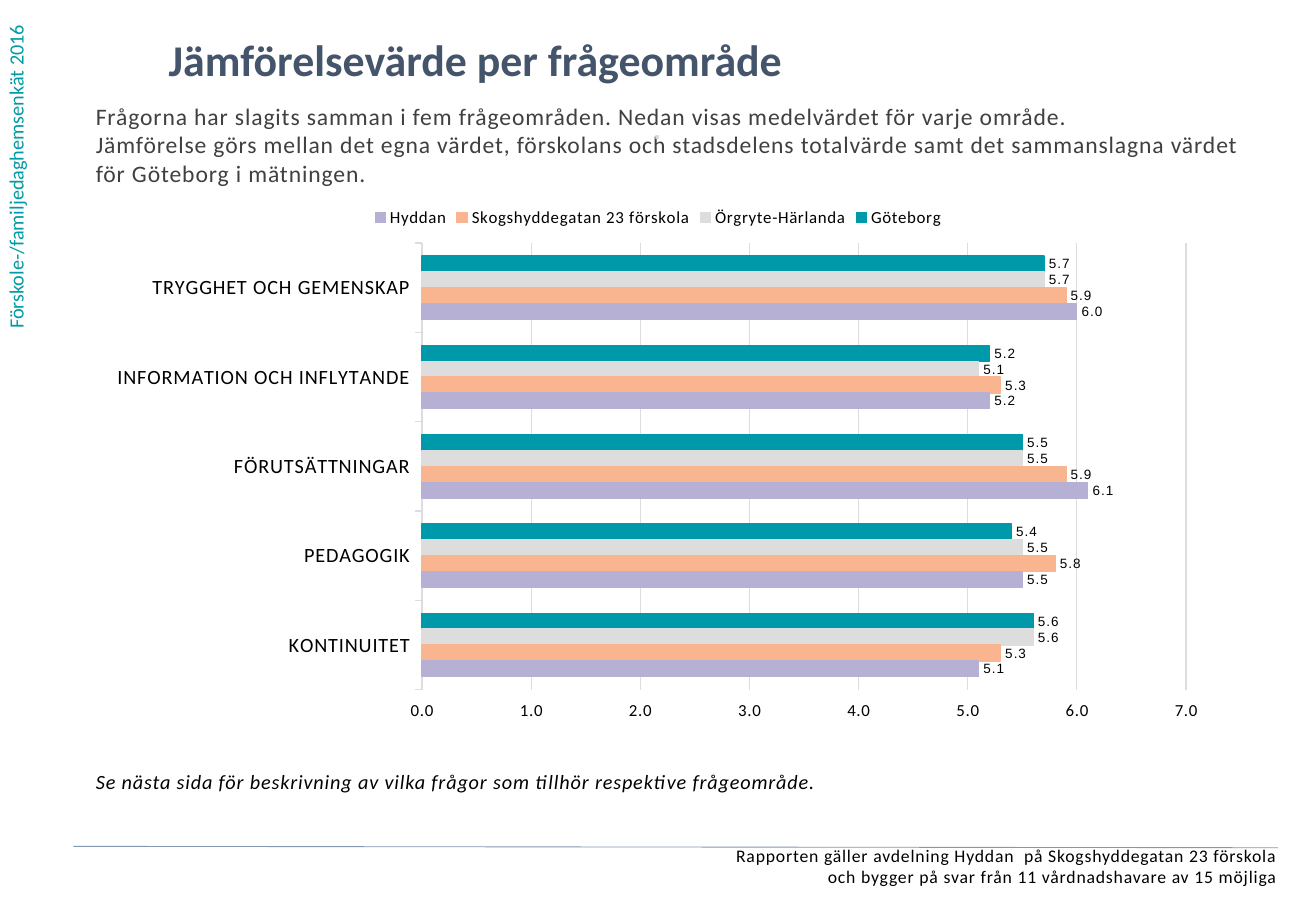
from pptx import Presentation
from pptx.chart.data import CategoryChartData as ChartData
from pptx.dml.color import RGBColor as RGB
from pptx.enum.chart import XL_CHART_TYPE as Kind
from pptx.enum.chart import XL_LABEL_POSITION as Spot
from pptx.enum.chart import XL_LEGEND_POSITION as Side
from pptx.enum.chart import XL_TICK_LABEL_POSITION as Place
from pptx.enum.chart import XL_TICK_MARK as Tick
from pptx.enum.shapes import MSO_CONNECTOR as Link
from pptx.enum.text import PP_ALIGN as Align
from pptx.oxml.ns import qn
from pptx.util import Pt

INK = {
    "teal": "009BA4", "navy": "44546A", "gray": "404040", "black": "000000",
    "pale": "D2D9E2", "grid": "DDDDDD", "rule": "8497B0",
}
SCORES = [
    ("Göteborg", "0099AA", (5.7, 5.2, 5.5, 5.4, 5.6)),
    ("Örgryte-Härlanda", "DDDDDD", (5.7, 5.1, 5.5, 5.5, 5.6)),
    ("Skogshyddegatan 23 förskola", "F9B590", (5.9, 5.3, 5.9, 5.8, 5.3)),
    ("Hyddan", "B6B1D4", (6.0, 5.2, 6.1, 5.5, 5.1)),
]
FORMAT = "0.0;0.0"


def style(font, size, ink="black", face="Calibri", gap=50):
    """Set a font; gap is the letter spacing in hundredths of a point."""
    font.name, font.size = face, Pt(size)
    font.color.rgb = RGB.from_string(INK[ink])
    font._element.set("spc", str(gap))


def add_text(box, text, size, ink, gap=50, align=Align.LEFT):
    """Add a text box without margins, one paragraph per line."""
    shape = slide.shapes.add_textbox(*map(Pt, box))
    frame = shape.text_frame
    frame.word_wrap = True
    frame.margin_left = frame.margin_right = 0
    frame.margin_top = frame.margin_bottom = 0
    frame.text = text
    for line in frame.paragraphs:
        line.alignment = align
        for run in line.runs:
            style(run.font, size, ink, gap=gap)
    return frame


deck = Presentation()
deck.slide_width, deck.slide_height = Pt(780), Pt(540)
slide = deck.slides.add_slide(deck.slide_layouts[6])

# Texts
survey = add_text((2, 0, 26, 195), "Förskole-/familjedaghemsenkät 2016", 12, "teal", 0)
survey._txBody.bodyPr.set("vert", "vert270")
title = add_text((100, 19.5, 600, 41), "Jämförelsevärde per frågeområde", 26, "navy", 0)
title.paragraphs[0].runs[0].font.bold = True
add_text(
    (56.8, 60.3, 690, 54),
    "Frågorna har slagits samman i fem frågeområden. Nedan visas medelvärdet för varje område.\n"
    "Jämförelse görs mellan det egna värdet, förskolans och stadsdelens totalvärde "
    "samt det sammanslagna värdet för Göteborg i mätningen.",
    14, "gray")
add_text(
    (8, 500.8, 749, 31),
    "Rapporten gäller avdelning Hyddan  på Skogshyddegatan 23 förskola\n"
    "och bygger på svar från 11 vårdnadshavare av 15 möjliga",
    10.5, "black", align=Align.RIGHT)
dot = add_text((278.5, 73.5, 222, 28), "⋅", 12, "pale", align=Align.CENTER)
dot.paragraphs[0].runs[0].font.bold = True
note = add_text(
    (56.8, 456, 666, 20),
    "Se nästa sida för beskrivning av vilka frågor som tillhör respektive frågeområde.",
    12, "black")
note.paragraphs[0].runs[0].font.italic = True

# Chart
data = ChartData(number_format=FORMAT)
data.categories = ["TRYGGHET OCH GEMENSKAP", "INFORMATION OCH INFLYTANDE",
                   "FÖRUTSÄTTNINGAR", "PEDAGOGIK", "KONTINUITET"]
for name, _, marks in SCORES:
    data.add_series(name, marks)
chart = slide.shapes.add_chart(
    Kind.BAR_CLUSTERED, Pt(57), Pt(115.4), Pt(666), Pt(319), data).chart
chart.has_title = False
style(chart.font, 10)
chart.has_legend = True
chart.legend.position = Side.TOP
chart.legend.include_in_layout = False
style(chart.legend.font, 10)

plot = chart.plots[0]
plot.gap_width, plot.overlap = 162, 0
plot.vary_by_categories = False
for series, (_, tint, _) in zip(plot.series, SCORES):
    color = RGB.from_string(tint)
    series.format.fill.solid()
    series.format.fill.fore_color.rgb = color
    series.format.line.color.rgb = color
    series.format.line.width = Pt(0.75)
    labels = series.data_labels
    labels.show_value = True
    labels.number_format = FORMAT
    labels.number_format_is_linked = False
    labels.position = Spot.OUTSIDE_END
    style(labels.font, 8, face="Arial")

areas, scale = chart.category_axis, chart.value_axis
areas.reverse_order = True
scale.tick_label_position = Place.HIGH
scale.minimum_scale, scale.maximum_scale, scale.major_unit = 0, 7, 1
scale.has_major_gridlines = True
for line in (areas.format.line, scale.major_gridlines.format.line):
    line.color.rgb = RGB.from_string(INK["grid"])
    line.width = Pt(0.75)
scale.format.line.fill.background()
for axis, size in ((areas, 12), (scale, 10)):
    axis.major_tick_mark = Tick.OUTSIDE
    style(axis.tick_labels.font, size)
scale.tick_labels.number_format = FORMAT
scale.tick_labels.number_format_is_linked = False

# Plot area as shares of the chart frame
area = chart._chartSpace.chart.plotArea
layout = area.find(qn("c:layout"))
if layout is None:
    layout = area.makeelement(qn("c:layout"), {})
    area.insert(0, layout)
manual = layout.makeelement(qn("c:manualLayout"), {})
layout.append(manual)
for tag, val in (("layoutTarget", "inner"), ("xMode", "edge"), ("yMode", "edge"),
                 ("x", "0.29"), ("y", "0.09"), ("w", "0.68"), ("h", "0.83")):
    manual.append(manual.makeelement(qn("c:" + tag), {"val": val}))

# Footer rule
rule = slide.shapes.add_connector(Link.STRAIGHT, Pt(43.5), Pt(501.7), Pt(757.5), Pt(502.5))
rule.line.color.rgb = RGB.from_string(INK["rule"])
rule.line.width = Pt(0.5)
props = rule._element.spPr
props.append(props.makeelement(qn("a:effectLst"), {}))

deck.save("out.pptx")
